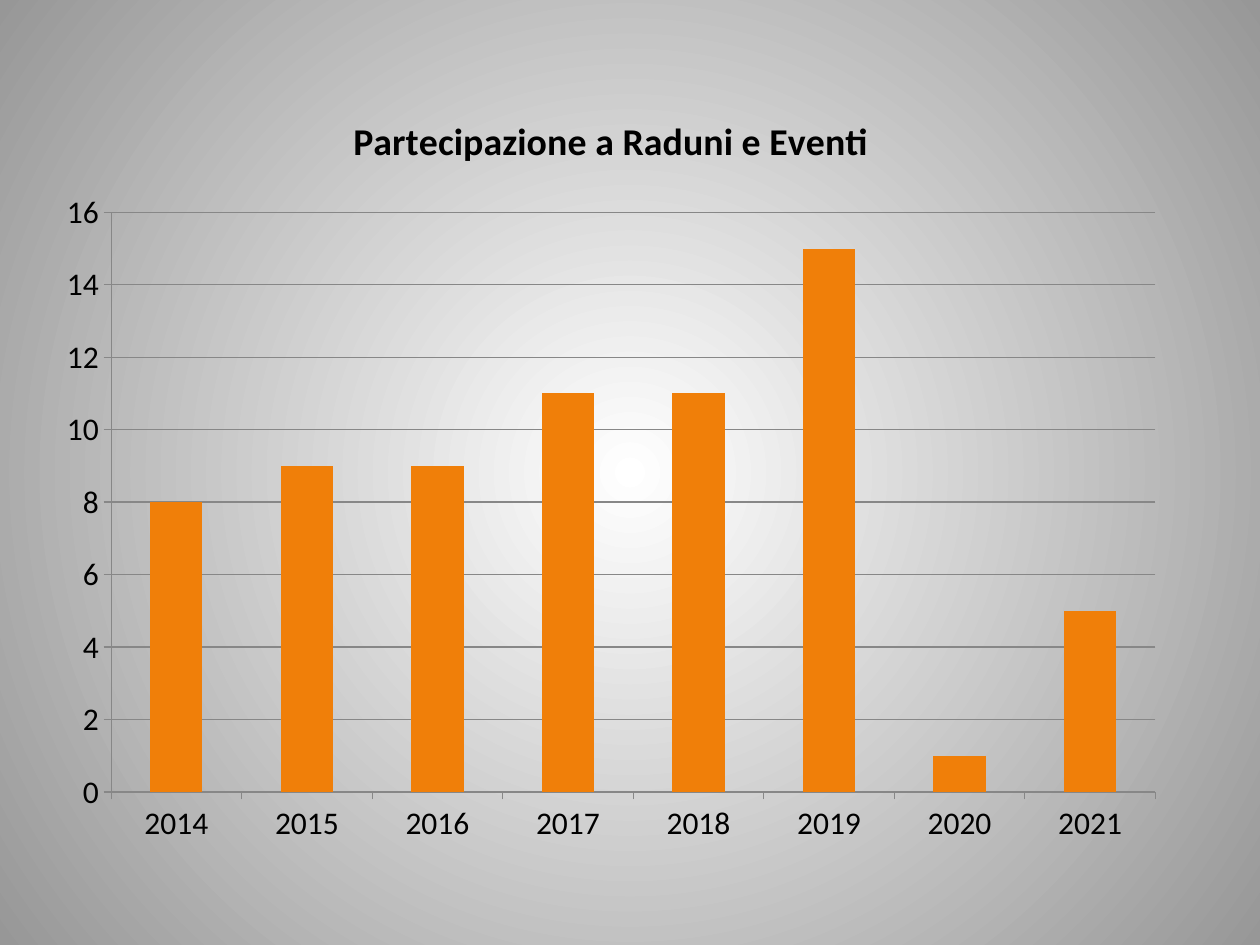
from dataclasses import dataclass

from lxml import etree
from pptx import Presentation
from pptx import util as u
from pptx.chart.data import CategoryChartData
from pptx.dml.color import RGBColor
from pptx.enum import chart as c
from pptx.oxml.ns import qn


@dataclass(frozen=True)
class Theme:
    font: str = "Calibri"
    text_size: u.Pt = u.Pt(18)
    title_size: u.Pt = u.Pt(21.6)
    text: RGBColor = RGBColor(0x00, 0x00, 0x00)
    bar: RGBColor = RGBColor(0xF0, 0x7F, 0x09)
    line: RGBColor = RGBColor(0x87, 0x87, 0x87)
    background: tuple = (RGBColor(0xFF, 0xFF, 0xFF), RGBColor(0x97, 0x97, 0x97))


@dataclass(frozen=True)
class YearCount:
    year: str
    events: int


THEME = Theme()
TITLE = "Partecipazione a Raduni e Eventi"
COUNTS = [YearCount(str(year), events)
          for year, events in enumerate((8, 9, 9, 11, 11, 15, 1, 5), start=2014)]


def paint_background(slide) -> None:
    """Fill the background with a circular gradient from the centre."""
    fill = slide.background.fill
    fill.gradient()
    for stop, color in zip(fill.gradient_stops, THEME.background):
        stop.color.rgb = color
    gradient = slide.element.find(".//" + qn("a:gradFill"))
    gradient.remove(gradient.find(qn("a:lin")))
    path = etree.SubElement(gradient, qn("a:path"), {"path": "circle"})
    etree.SubElement(path, qn("a:fillToRect"), dict.fromkeys("ltrb", "50000"))


def format_font(font, size: u.Pt, bold: bool) -> None:
    font.name = THEME.font
    font.size = size
    font.bold = bold
    font.color.rgb = THEME.text


def format_axis(axis, gridlines: bool) -> None:
    axis.major_tick_mark = c.XL_TICK_MARK.OUTSIDE
    axis.minor_tick_mark = c.XL_TICK_MARK.NONE
    axis.has_major_gridlines = gridlines
    lines = [axis.format.line]
    if gridlines:
        lines.append(axis.major_gridlines.format.line)
    for line in lines:
        line.color.rgb = THEME.line
        line.width = u.Pt(0.75)


def add_events_chart(slide) -> None:
    data = CategoryChartData()
    data.categories = [count.year for count in COUNTS]
    data.add_series(TITLE, [count.events for count in COUNTS])
    chart = slide.shapes.add_chart(
        c.XL_CHART_TYPE.COLUMN_CLUSTERED,
        u.Inches(0.35), u.Inches(0.68), u.Inches(9), u.Inches(6.13), data).chart
    chart.has_legend = False
    format_font(chart.font, THEME.text_size, bold=False)

    # Title
    chart.has_title = True
    chart.chart_title.include_in_layout = False
    chart.chart_title.text_frame.text = TITLE
    paragraph = chart.chart_title.text_frame.paragraphs[0]
    format_font(paragraph.font, THEME.title_size, bold=True)

    # Axes
    format_axis(chart.category_axis, gridlines=False)
    format_axis(chart.value_axis, gridlines=True)
    chart.value_axis.minimum_scale = 0
    chart.value_axis.maximum_scale = 16
    chart.value_axis.major_unit = 2

    # Columns
    plot = chart.plots[0]
    plot.gap_width = 150
    plot.vary_by_categories = False
    series_fill = plot.series[0].format.fill
    series_fill.solid()
    series_fill.fore_color.rgb = THEME.bar


def main() -> None:
    presentation = Presentation()
    presentation.slide_width = u.Inches(10)
    presentation.slide_height = u.Inches(7.5)
    blank_layout = presentation.slide_layouts[6]
    slide = presentation.slides.add_slide(blank_layout)
    paint_background(slide)
    add_events_chart(slide)
    presentation.save("out.pptx")


if __name__ == "__main__":
    main()
